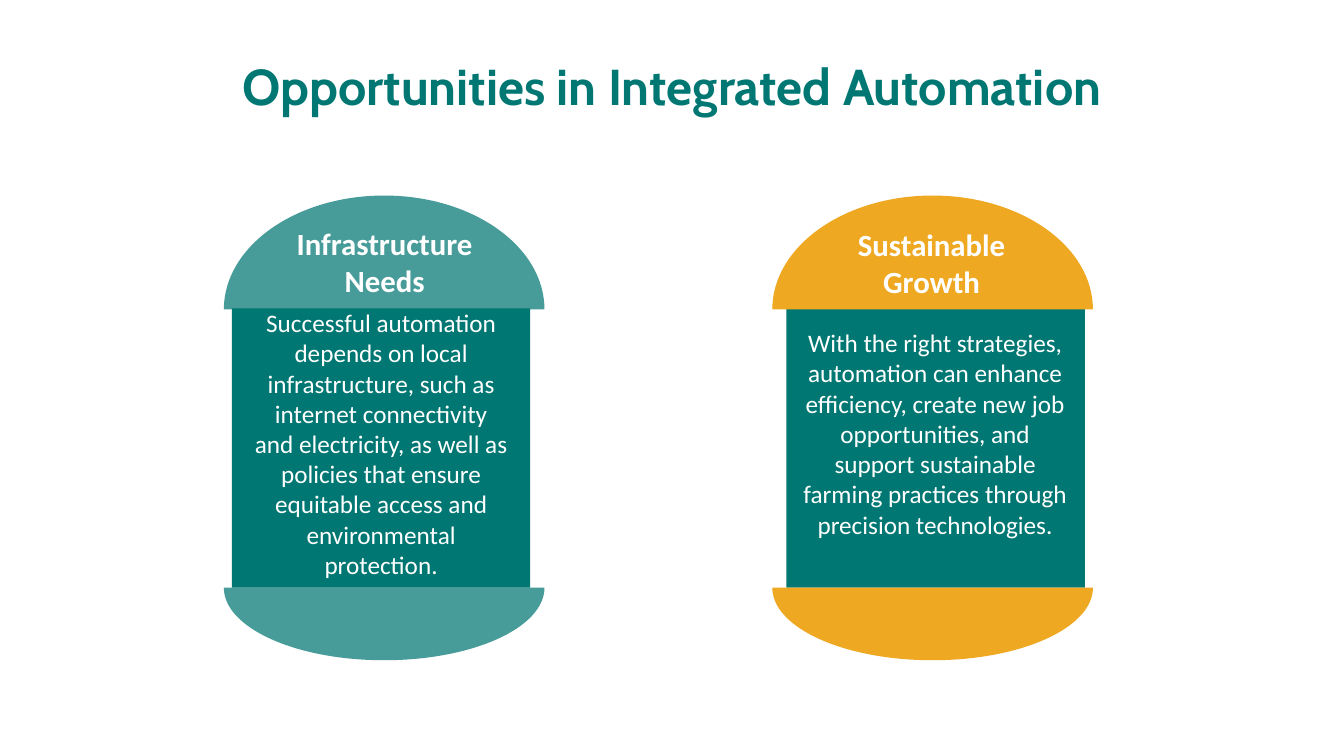
import lxml.etree
import pptx
import pptx.dml.color
import pptx.enum.shapes
import pptx.enum.text
import pptx.oxml.ns
import pptx.util

Inches = pptx.util.Inches
qn = pptx.oxml.ns.qn
COLORS = {"teal": "007772", "amber": "EEA821", "white": "FFFFFF"}
CAP_WIDTH = 3.18
BODY_TOP = 3.06
BODY_BOTTOM = 5.83
ARC = 0.5523

COLUMNS = [
    {
        "cap_left": 2.22, "body_left": 2.3, "cap_color": "teal", "opacity": 72,
        "heading": "Infrastructure Needs", "heading_at": (2.5, 2.18, 2.63, 0.84),
        "detail": "Successful automation depends on local infrastructure, such as "
                  "internet connectivity and electricity, as well as policies that "
                  "ensure equitable access and environmental protection.",
        "detail_at": (2.42, 3, 2.72, 2.83),
    },
    {
        "cap_left": 7.66, "body_left": 7.8, "cap_color": "amber", "opacity": 100,
        "heading": "Sustainable Growth", "heading_at": (7.91, 2.19, 2.66, 0.84),
        "detail": "With the right strategies, automation can enhance efficiency, "
                  "create new job opportunities, and support sustainable farming "
                  "practices through precision technologies.",
        "detail_at": (7.85, 3.2, 2.85, 2.22),
    },
]


def rgb(name):
    return pptx.dml.color.RGBColor.from_string(COLORS[name])


def paint(shape, color, opacity=100):
    shape.shadow.inherit = False
    shape.fill.solid()
    shape.fill.fore_color.rgb = rgb(color)
    shape.line.fill.background()
    if opacity < 100:
        fill = shape._element.spPr.find(qn("a:solidFill"))
        alpha = lxml.etree.SubElement(fill[0], qn("a:alpha"))
        alpha.set("val", str(opacity * 1000))


def write(frame, text, font, size, color, bold=False):
    para = frame.paragraphs[0]
    para.alignment = pptx.enum.text.PP_ALIGN.CENTER
    span = para.add_run()
    span.text = text
    span.font.name = font
    span.font.size = pptx.util.Pt(size)
    span.font.bold = bold
    span.font.color.rgb = rgb(color)
    return para


def add_title(page, text):
    title = page.shapes.title
    title.left, title.top = Inches(0), Inches(0.41)
    title.width, title.height = Inches(13.33), Inches(0.89)
    frame = title.text_frame
    frame.auto_size = pptx.enum.text.MSO_AUTO_SIZE.NONE
    frame.vertical_anchor = pptx.enum.text.MSO_ANCHOR.MIDDLE
    frame.margin_bottom = Inches(0.15)
    para = write(frame, text, "Cabin", 36, "teal", bold=True)
    para.line_spacing = 1.15


def add_body(page, left):
    body = page.shapes.add_shape(
        pptx.enum.shapes.MSO_SHAPE.RECTANGLE, Inches(left), Inches(BODY_TOP),
        Inches(2.96), Inches(BODY_BOTTOM - BODY_TOP))
    paint(body, "teal")


def bend(segment, controls):
    segment.tag = qn("a:cubicBezTo")
    for index, (x, y) in enumerate(controls):
        point = lxml.etree.Element(qn("a:pt"), x=str(int(x)), y=str(int(y)))
        segment.insert(index, point)


def add_cap(page, left, base, rise, color, opacity):
    radius = CAP_WIDTH / 2
    builder = page.shapes.build_freeform(Inches(left), Inches(base))
    builder.add_line_segments([
        (Inches(left + radius), Inches(base - rise)),
        (Inches(left + CAP_WIDTH), Inches(base)),
    ], close=True)
    cap = builder.convert_to_shape()
    width, height = cap.width, cap.height
    flat, apex = (height, 0) if rise > 0 else (0, height)
    side = flat + (apex - flat) * ARC
    reach = width / 2 * ARC
    rising, falling = list(cap._element.iter(qn("a:lnTo")))
    bend(rising, [(0, side), (width / 2 - reach, apex)])
    bend(falling, [(width / 2 + reach, apex), (width, side)])
    paint(cap, color, opacity)


def add_label(page, at, text, size, bold=False):
    box = page.shapes.add_textbox(*[Inches(length) for length in at])
    box.text_frame.word_wrap = True
    write(box.text_frame, text, "Calibri", size, "white", bold)


def add_column(page, column):
    add_body(page, column["body_left"])
    for base, rise in ((3.07, 1.13), (BODY_BOTTOM, -0.72)):
        add_cap(page, column["cap_left"], base, rise,
                column["cap_color"], column["opacity"])
    add_label(page, column["heading_at"], column["heading"], 22, bold=True)
    add_label(page, column["detail_at"], column["detail"], 18)


def main():
    deck = pptx.Presentation()
    deck.slide_width, deck.slide_height = Inches(13.33), Inches(7.5)
    page = deck.slides.add_slide(deck.slide_layouts[5])
    add_title(page, "Opportunities in Integrated Automation")
    for column in COLUMNS:
        add_column(page, column)
    deck.save("out.pptx")


if __name__ == "__main__":
    main()
